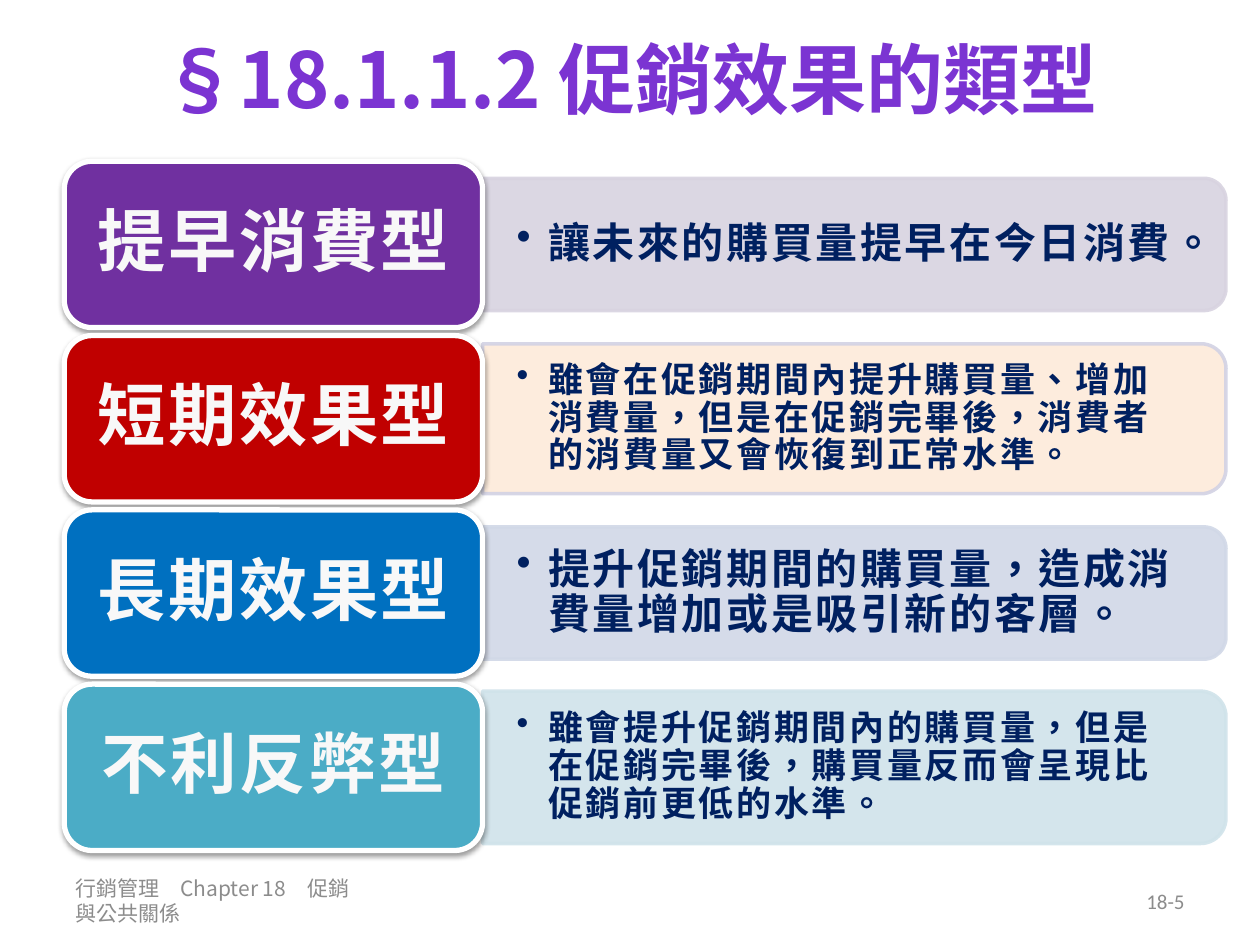
from lxml import etree
from pptx import Presentation
from pptx.dml.color import RGBColor
from pptx.enum.lang import MSO_LANGUAGE_ID
from pptx.enum.shapes import MSO_SHAPE
from pptx.enum.text import MSO_ANCHOR, PP_ALIGN
from pptx.oxml import parse_xml
from pptx.oxml.ns import qn
from pptx.util import Inches, Pt

NS = 'xmlns:a="http://schemas.openxmlformats.org/drawingml/2006/main"'
CJK = "Noto Sans CJK SC"
ROW_TOP, ROW_PITCH = 1.28, 4.15 / 3
TAB_LEFT, TAB_WIDTH, TAB_HEIGHT = 0.51, 3.32, 1.32
PANEL_LEFT, PANEL_WIDTH = 3.83, 5.9

# label, label size, tab colour, panel fill, panel line, panel height, text size, text
ROWS = [
    ("提早消費型", 39, "7030A0", "D8D3E0", "D8D3E0", 1.05, 24,
     "讓未來的購買量提早在今日消費。"),
    ("短期效果型", 39, "C00000", "FDEADA", "D2D2E4", 1.19, 20,
     "雖會在促銷期間內提升購買量、增加消費量，但是在促銷完畢後，"
     "消費者的消費量又會恢復到正常水準。"),
    ("長期效果型", 39, "0070C0", "D1D8E7", "D1D8E7", 1.05, 24,
     "提升促銷期間的購買量，造成消費量增加或是吸引新的客層。"),
    ("不利反弊型", 38, "4BACC6", "D0E3EA", "D0E3EA", 1.21, 20,
     "雖會提升促銷期間內的購買量，但是在促銷完畢後，"
     "購買量反而會呈現比促銷前更低的水準。"),
]


def rgb(color):
    return RGBColor.from_string(color)


def set_all(target, values):
    for name, value in values.items():
        setattr(target, name, value)


def set_frame(frame, side=0.1, edge=0.05):
    set_all(frame, {
        "word_wrap": True, "vertical_anchor": MSO_ANCHOR.MIDDLE,
        "margin_left": Inches(side), "margin_right": Inches(side),
        "margin_top": Inches(edge), "margin_bottom": Inches(edge)})


def write(paragraph, text, size, color=None, name="Calibri", bold=False, spacing=0):
    """Add one run with Latin and East Asian fonts; spacing is in points."""
    run = paragraph.add_run()
    run.text = text
    set_all(run.font, {"size": Pt(size), "bold": bold, "name": name,
                       "language_id": MSO_LANGUAGE_ID.TRADITIONAL_CHINESE})
    if color:
        run.font.color.rgb = rgb(color)
    properties = run.font._element
    latin = properties.find(qn("a:latin"))
    latin.addnext(parse_xml(f'<a:ea {NS} typeface="{CJK}"/>'))
    if spacing:
        properties.set("spc", str(int(spacing * 100)))
    return run


def paint(shape, fill, line, width):
    shape.shadow.inherit = False
    shape.fill.solid()
    shape.fill.fore_color.rgb = rgb(fill)
    shape.line.color.rgb = rgb(line)
    shape.line.width = Pt(width)


def add_title(slide, text):
    title = slide.shapes.title
    set_all(title, {"left": Inches(0.5), "top": Inches(0),
                    "width": Inches(9), "height": Inches(1.23)})
    set_frame(title.text_frame)
    paragraph = title.text_frame.paragraphs[0]
    paragraph.alignment = PP_ALIGN.CENTER
    run = write(paragraph, text, 44, name=CJK, bold=True)
    stops = "".join(
        f'<a:gs pos="{pos * 1000}"><a:srgbClr val="{color}"/></a:gs>'
        for pos, color in ((0, "3D1B67"), (43, "7B34D2"), (48, "7330C4"), (100, "3D1B67")))
    properties = run.font._element
    properties.insert(0, parse_xml(
        f'<a:ln {NS} w="9000"><a:solidFill><a:srgbClr val="5E457C"/></a:solidFill></a:ln>'))
    properties.insert(1, parse_xml(
        f'<a:gradFill {NS}><a:gsLst>{stops}</a:gsLst><a:lin ang="5400000"/></a:gradFill>'))


def add_panel(slide, middle, height, fill, line):
    """Rectangle turned a quarter so that its rounded corners face right."""
    center = PANEL_LEFT + PANEL_WIDTH / 2
    panel = slide.shapes.add_shape(
        MSO_SHAPE.ROUND_2_SAME_RECTANGLE,
        Inches(center - height / 2), Inches(middle - PANEL_WIDTH / 2),
        Inches(height), Inches(PANEL_WIDTH))
    panel.rotation = 90
    paint(panel, fill, line, 2)
    for color in panel._element.spPr.iter(qn("a:srgbClr")):
        etree.SubElement(color, qn("a:alpha"), val="90000")


def add_description(slide, middle, height, text, size):
    box = slide.shapes.add_textbox(Inches(PANEL_LEFT), Inches(middle - height / 2),
                                   Inches(5.85), Inches(height))
    set_frame(box.text_frame, 0.27, 0.14)
    paragraph = box.text_frame.paragraphs[0]
    properties = paragraph._p.get_or_add_pPr()
    properties.set("marL", str(Inches(0.25)))
    properties.set("indent", str(-Inches(0.25)))
    etree.SubElement(properties, qn("a:buChar"), char="•")
    set_all(paragraph, {"level": 1, "line_spacing": 0.9})
    write(paragraph, text, size, "002060", bold=True, spacing=1.5)


def add_tab(slide, top, label, size, fill):
    tab = slide.shapes.add_shape(MSO_SHAPE.ROUNDED_RECTANGLE, Inches(TAB_LEFT), Inches(top),
                                 Inches(TAB_WIDTH), Inches(TAB_HEIGHT))
    paint(tab, fill, "FFFFFF", 3)
    tab._element.spPr.find(qn("a:effectLst")).append(parse_xml(
        f'<a:outerShdw {NS} blurRad="{Pt(3.1)}" dist="{Pt(1.6)}" dir="5400000" rotWithShape="0">'
        '<a:srgbClr val="000000"><a:alpha val="38000"/></a:srgbClr></a:outerShdw>'))
    set_frame(tab.text_frame, 0.16, 0.08)
    paragraph = tab.text_frame.paragraphs[0]
    set_all(paragraph, {"alignment": PP_ALIGN.CENTER, "line_spacing": 0.9})
    write(paragraph, label, size, "F8F8F8", bold=True, spacing=1.5)


def add_footer(slide, left, width, text, alignment, name):
    box = slide.shapes.add_textbox(Inches(left), Inches(6.95), Inches(width), Inches(0.4))
    set_frame(box.text_frame)
    paragraph = box.text_frame.paragraphs[0]
    paragraph.alignment = alignment
    write(paragraph, text, 12, "8C8C8C", name)


def main():
    deck = Presentation()
    set_all(deck, {"slide_width": Inches(10), "slide_height": Inches(7.5)})
    slide = deck.slides.add_slide(deck.slide_layouts[5])
    add_title(slide, "§18.1.1.2 促銷效果的類型")
    add_footer(slide, 0.5, 2.45, "行銷管理　Chapter 18　促銷與公共關係", PP_ALIGN.LEFT, CJK)
    add_footer(slide, 7.17, 2.33, "18-5", PP_ALIGN.RIGHT, "Calibri")
    for index, row in enumerate(ROWS):
        label, label_size, tab_fill, panel_fill, panel_line, height, size, text = row
        top = ROW_TOP + index * ROW_PITCH
        middle = top + TAB_HEIGHT / 2
        add_panel(slide, middle, height, panel_fill, panel_line)
        add_description(slide, middle, height - 0.1, text, size)
        add_tab(slide, top, label, label_size, tab_fill)
    deck.save("out.pptx")


if __name__ == "__main__":
    main()
